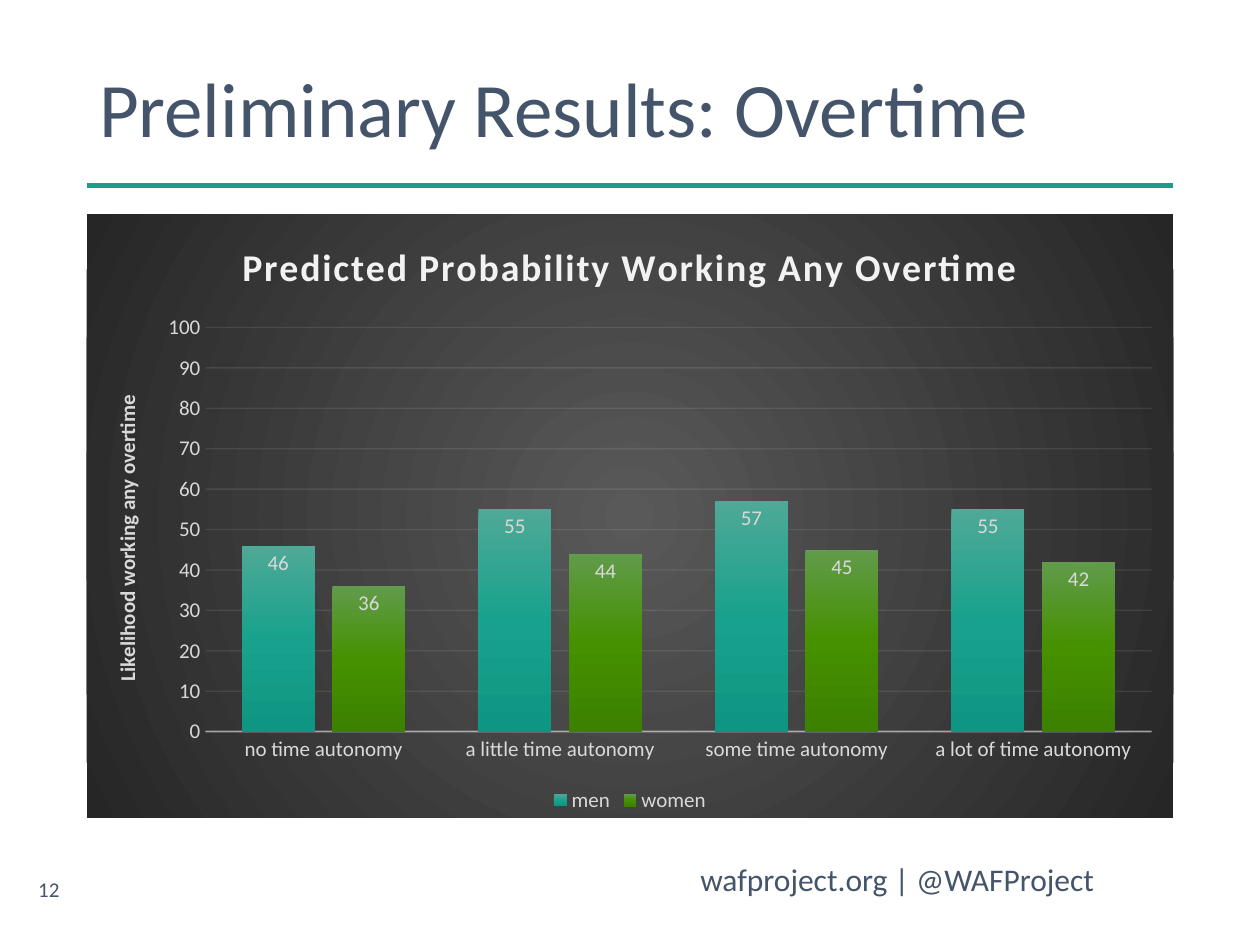
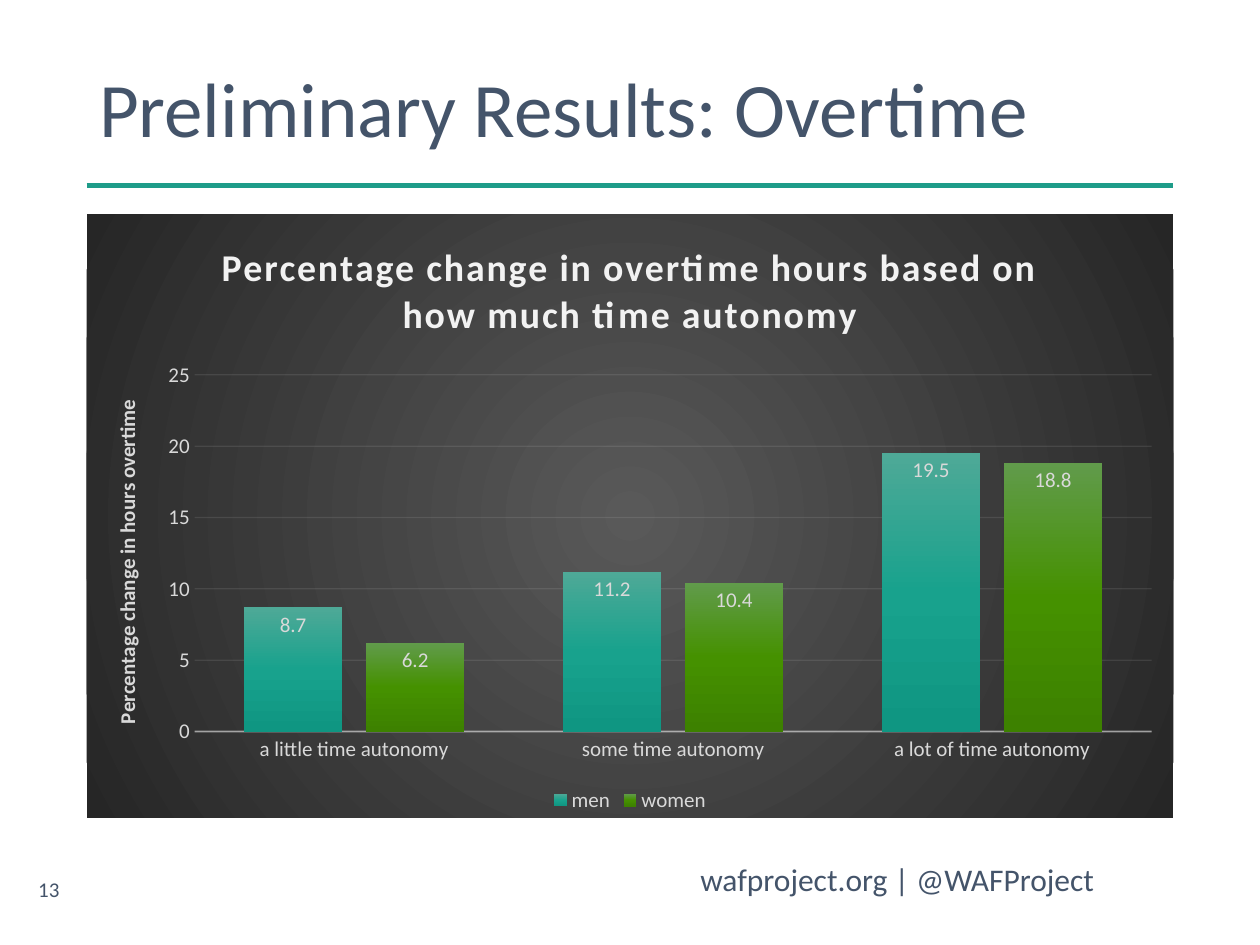
from lxml import etree
from pptx import Presentation
from pptx.chart.data import CategoryChartData
from pptx.dml.color import RGBColor
from pptx.enum.chart import XL_CHART_TYPE as ChartType
from pptx.enum.chart import XL_LABEL_POSITION as LabelPosition
from pptx.enum.chart import XL_LEGEND_POSITION as LegendPosition
from pptx.enum.chart import XL_TICK_MARK as TickMark
from pptx.enum.shapes import MSO_CONNECTOR as Connector
from pptx.enum.text import MSO_ANCHOR as Anchor
from pptx.enum.text import PP_ALIGN as Align
from pptx.oxml import parse_xml
from pptx.oxml.ns import nsdecls, qn
from pptx.util import Inches, Pt

FONT = "Calibri"
INK, TEAL, PALE, WHITISH = "44546A", "1E9C89", "D9D9D9", "F2F2F2"
COLUMNS, ROWS = 100, 75  # square grid cells over a 10 by 7.5 inch slide
LEFT, WIDTH = 6.88, 86.24  # content column shared by title, rule and chart

PANEL_STOPS = {0: "595959", 100: "262626"}
SERIES_STOPS = [
    {0: "4EA997", 50: "18A28D", 100: "0F9682"},
    {0: "619B4B", 50: "459100", 100: "3D8100"},
]
DOWNWARD = '<a:lin ang="5400000" scaled="0"/>'
FROM_CENTRE = ('<a:path path="circle"><a:fillToRect l="50000" t="50000" '
               'r="50000" b="50000"/></a:path>')


def color(value):
    return RGBColor.from_string(value)


def style_font(font, size, tint=PALE, bold=False):
    font.name, font.size, font.bold = FONT, Pt(size), bold
    font.color.rgb = color(tint)


def write(frame, text, size, tint=INK, bold=False, align=None,
          line_spacing=None, tracking=None):
    paragraph = frame.paragraphs[0]
    paragraph.alignment = align
    paragraph.line_spacing = line_spacing
    run = paragraph.add_run()
    run.text = text
    style_font(run.font, size, tint, bold)
    if tracking:
        run.font._element.set("spc", str(tracking))


def gradient(stops, direction):
    marks = "".join(f'<a:gs pos="{place * 1000}"><a:srgbClr val="{tint}"/></a:gs>'
                    for place, tint in stops.items())
    return parse_xml(f'<a:gradFill {nsdecls("a")} rotWithShape="1">'
                     f'<a:gsLst>{marks}</a:gsLst>{direction}</a:gradFill>')


def faint_line(line, width, opacity):
    line.width = Pt(width)
    line.color.rgb = color(WHITISH)
    tint = line._get_or_add_ln().find(".//" + qn("a:srgbClr"))
    etree.SubElement(tint, qn("a:alpha")).set("val", str(opacity * 1000))


class Deck:
    def __init__(self):
        self.presentation = Presentation()
        self.presentation.slide_width = Inches(10)
        self.presentation.slide_height = Inches(7.5)
        self.slide = None

    def cells(self, *lengths):
        """Turn alternating column and row counts into slide lengths."""
        units = (self.presentation.slide_width / COLUMNS,
                 self.presentation.slide_height / ROWS)
        return [round(length * units[i % 2]) for i, length in enumerate(lengths)]

    def text(self, box, text, anchor=Anchor.TOP, **style):
        frame = self.slide.shapes.add_textbox(*self.cells(*box)).text_frame
        frame.word_wrap = True
        frame.vertical_anchor = anchor
        write(frame, text, **style)

    def rule(self, row):
        line = self.slide.shapes.add_connector(
            Connector.STRAIGHT, *self.cells(LEFT, row, LEFT + WIDTH, row))
        line.line.color.rgb = color(TEAL)
        line.line.width = Pt(3)
        etree.SubElement(line._element.spPr, qn("a:effectLst"))

    def start(self, title, number):
        self.slide = self.presentation.slides.add_slide(
            self.presentation.slide_layouts[6])
        self.text((54.6, 67.8, 59.4, 4), "wafproject.org | @WAFProject", size=18)
        self.rule(14.7)
        self.text((LEFT, 4, WIDTH, 9.8), title, anchor=Anchor.MIDDLE,
                  size=44, line_spacing=0.9)
        self.text((1.4, 68.6, 4.3, 4), str(number), anchor=Anchor.MIDDLE,
                  size=12, align=Align.RIGHT)

    def column_chart(self, title, axis_title, categories, values,
                     label_format="General", maximum=None):
        data = CategoryChartData()
        data.categories = categories
        for name, numbers in values.items():
            data.add_series(name, numbers)
        chart = self.slide.shapes.add_chart(
            ChartType.COLUMN_CLUSTERED, *self.cells(LEFT, 17, WIDTH, 47.9),
            data).chart
        style_font(chart.font, 12)

        # Dark panel behind the whole chart
        panel = parse_xml(f'<c:spPr {nsdecls("c", "a")}/>')
        panel.append(gradient(PANEL_STOPS, FROM_CENTRE))
        chart._chartSpace.find(qn("c:txPr")).addprevious(panel)

        # Title and legend
        write(chart.chart_title.text_frame, title, 21.6, WHITISH, bold=True,
              tracking=100)
        chart.chart_title.include_in_layout = False
        chart.has_legend = True
        chart.legend.position = LegendPosition.BOTTOM
        chart.legend.include_in_layout = False
        style_font(chart.legend.font, 12)

        # Axes
        value_axis, category_axis = chart.value_axis, chart.category_axis
        for axis in (value_axis, category_axis):
            axis.major_tick_mark = axis.minor_tick_mark = TickMark.NONE
            style_font(axis.tick_labels.font, 12)
        faint_line(category_axis.format.line, 1, 54)
        faint_line(value_axis.major_gridlines.format.line, 0.75, 10)
        value_axis.format.line.fill.background()
        value_axis.minimum_scale = 0
        if maximum:
            value_axis.maximum_scale = maximum
        write(value_axis.axis_title.text_frame, axis_title, 12, PALE, bold=True)

        # Columns and their labels
        plot = chart.plots[0]
        plot.gap_width, plot.overlap = 100, -24
        plot.vary_by_categories = False
        for series, stops in zip(plot.series, SERIES_STOPS):
            series.format.fill.solid()
            solid = series._element.find(qn("c:spPr")).find(qn("a:solidFill"))
            solid.getparent().replace(solid, gradient(stops, DOWNWARD))
            labels = series.data_labels
            labels.show_value = True
            labels.position = LabelPosition.INSIDE_END
            labels.number_format = label_format
            labels.number_format_is_linked = False
            style_font(labels.font, 12)


def main():
    deck = Deck()
    heading = "Preliminary Results: Overtime"
    autonomy = ["no time autonomy", "a little time autonomy",
                "some time autonomy", "a lot of time autonomy"]

    # Likelihood of overtime
    deck.start(heading, 12)
    deck.column_chart(
        "Predicted Probability Working Any Overtime",
        "Likelihood working any overtime", autonomy,
        {"men": [46, 55, 57, 55], "women": [36, 44, 45, 42]}, maximum=100)

    # Change in overtime hours, relative to no autonomy
    deck.start(heading, 13)
    deck.column_chart(
        "Percentage change in overtime hours based on how much time autonomy",
        "Percentage change in hours overtime", autonomy[1:],
        {"men": [8.7, 11.2, 19.5], "women": [6.2, 10.4, 18.8]},
        label_format="#,##0.0")

    deck.presentation.save("out.pptx")


if __name__ == "__main__":
    main()
